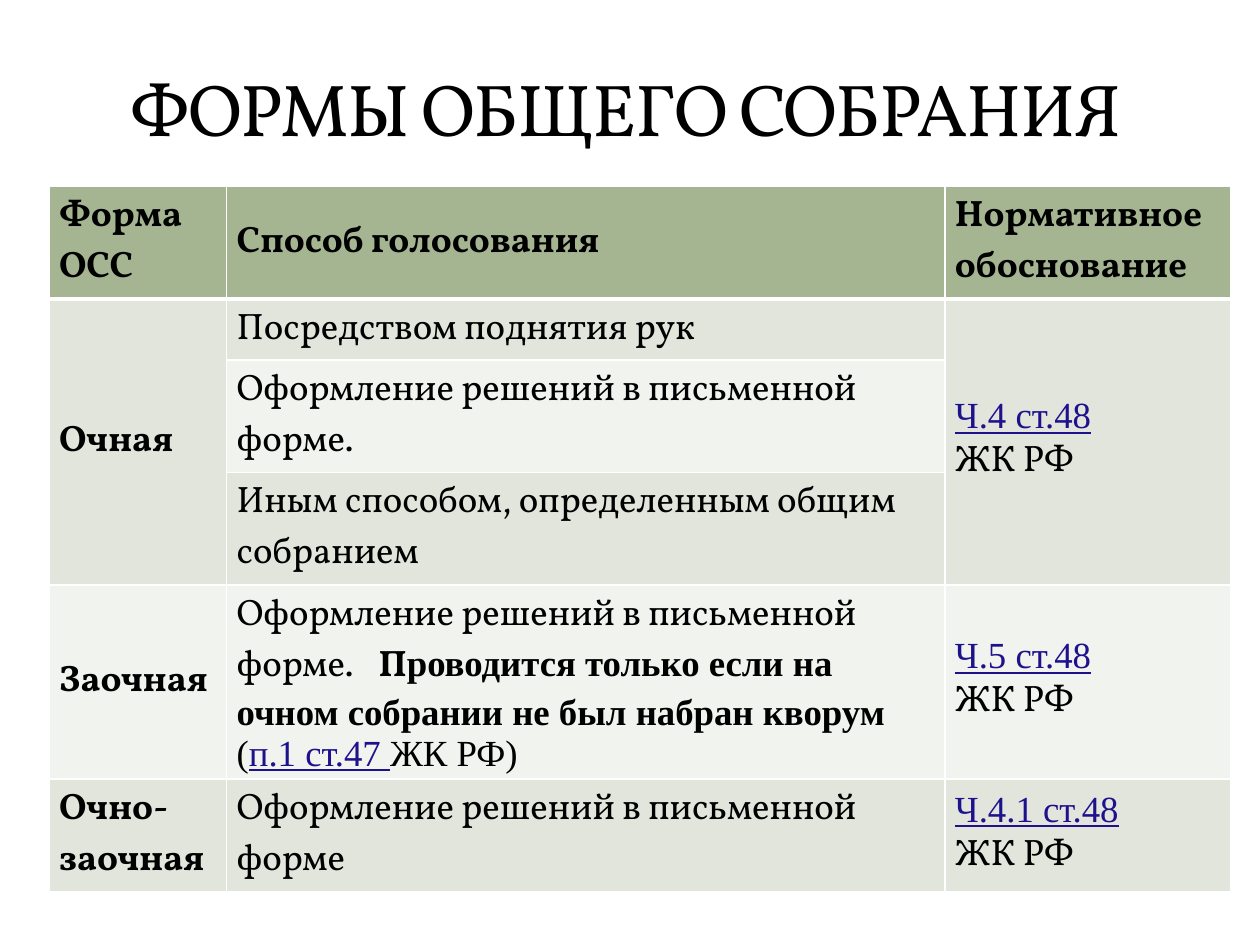
"""Build a slide with a table of the forms of the general meeting."""
from lxml.etree import SubElement
from pptx import Presentation
from pptx.dml.color import RGBColor
from pptx.enum.text import MSO_ANCHOR, PP_ALIGN
from pptx.oxml.ns import qn
from pptx.util import Cm, Pt

BLACK = RGBColor(0x00, 0x00, 0x00)
WHITE = RGBColor(0xFF, 0xFF, 0xFF)
LINK = RGBColor(0x1E, 0x12, 0x8C)
HEADER = RGBColor(0xA5, 0xB5, 0x92)
BANDS = [RGBColor(0xF0, 0xF3, 0xEE), RGBColor(0xE1, 0xE5, 0xDC)]

SERIF = "Vollkorn"
TIMES = "Times New Roman"
STYLES = {
    "title": dict(size=42, spacing=-1),
    "plain": dict(),
    "gap": dict(spacing=10),
    "bold": dict(bold=True),
    "times": dict(name=TIMES),
    "times bold": dict(name=TIMES, bold=True),
    "link": dict(name=TIMES, color=LINK, underline=True),
}

TITLE = "ФОРМЫ ОБЩЕГО СОБРАНИЯ"
COLUMN_WIDTHS = [3.58, 14.48, 5.77]
ROW_HEIGHTS = [2.03, 1.12, 2.03, 2.03, 3.84, 2.03]
MERGES = [((1, 0), (3, 0)), ((1, 2), (3, 2))]


def one(text, style="plain"):
    """Return cell content of one paragraph with one run."""
    return [[(text, style)]]


def article(reference):
    """Return cell content that cites an article of the code."""
    return [[(reference, "link")], [("ЖК РФ", "plain")]]


ABSENTEE = [
    [
        ("Оформление решений в письменной форме.", "plain"),
        (" ", "gap"),
        ("П", "bold"),
        ("роводится только если на очном собрании не был набран кворум", "times bold"),
    ],
    [("(", "times"), ("п.1 ст.47 ", "link"), ("ЖК РФ)", "times")],
]
ROWS = [
    [
        [[("Форма", "bold")], [("ОСС", "bold")]],
        one("Способ голосования", "bold"),
        one("Нормативное обоснование", "bold"),
    ],
    [one("Очная", "bold"), one("Посредством поднятия рук"), article("Ч.4 ст.48")],
    [[], one("Оформление решений в письменной форме."), []],
    [[], one("Иным способом, определенным общим собранием"), []],
    [one("Заочная", "bold"), ABSENTEE, article("Ч.5 ст.48")],
    [
        one("Очно-заочная", "bold"),
        one("Оформление решений в письменной форме"),
        article("Ч.4.1 ст.48"),
    ],
]


def add_run(paragraph, text, size=21, name=SERIF, color=BLACK,
            bold=False, underline=False, spacing=0):
    """Add a formatted run to a paragraph."""
    run = paragraph.add_run()
    run.text = text
    font = run.font
    font.size, font.name, font.bold = Pt(size), name, bold
    font.underline = underline
    font.color.rgb = color
    if spacing:
        run._r.get_or_add_rPr().set("spc", str(spacing * 100))


def write(frame, paragraphs):
    """Fill a text frame with paragraphs of styled runs."""
    for index, runs in enumerate(paragraphs):
        paragraph = frame.add_paragraph() if index else frame.paragraphs[0]
        for text, style in runs:
            add_run(paragraph, text, **STYLES[style])


def add_borders(cell, top, bottom):
    """Draw white borders around a cell."""
    properties = cell._tc.get_or_add_tcPr()
    for tag, width in (("lnL", 1), ("lnR", 1), ("lnT", top), ("lnB", bottom)):
        line = SubElement(properties, qn(f"a:{tag}"), w=str(Pt(width)))
        fill = SubElement(line, qn("a:solidFill"))
        SubElement(fill, qn("a:srgbClr"), val=str(WHITE))


def add_title(slide):
    """Add the centred title."""
    box = slide.shapes.add_textbox(Cm(1.19), Cm(0.41), Cm(22.86), Cm(2.77))
    frame = box.text_frame
    frame.word_wrap = True
    frame.vertical_anchor = MSO_ANCHOR.BOTTOM
    write(frame, one(TITLE, "title"))
    frame.paragraphs[0].alignment = PP_ALIGN.CENTER


def add_meeting_table(slide):
    """Add the table of meeting forms."""
    table = slide.shapes.add_table(
        len(ROWS), len(COLUMN_WIDTHS), Cm(0.99), Cm(3.76),
        Cm(sum(COLUMN_WIDTHS)), Cm(sum(ROW_HEIGHTS)),
    ).table
    for column, width in zip(table.columns, COLUMN_WIDTHS):
        column.width = Cm(width)
    for row, height in zip(table.rows, ROW_HEIGHTS):
        row.height = Cm(height)
    for first, last in MERGES:
        table.cell(*first).merge(table.cell(*last))
    for row_index, contents in enumerate(ROWS):
        for column_index, paragraphs in enumerate(contents):
            cell = table.cell(row_index, column_index)
            add_borders(cell, 3 if row_index == 1 else 1, 3 if row_index == 0 else 1)
            cell.fill.solid()
            cell.fill.fore_color.rgb = BANDS[row_index % 2] if row_index else HEADER
            cell.vertical_anchor = MSO_ANCHOR.MIDDLE
            cell.margin_left = cell.margin_right = Cm(0.2)
            cell.margin_top = cell.margin_bottom = Cm(0.1)
            write(cell.text_frame, paragraphs)


def main():
    """Create and save the presentation."""
    presentation = Presentation()
    presentation.slide_width, presentation.slide_height = Cm(25.4), Cm(19.05)
    slide = presentation.slides.add_slide(presentation.slide_layouts[6])
    add_meeting_table(slide)
    add_title(slide)
    presentation.save("out.pptx")


if __name__ == "__main__":
    main()
